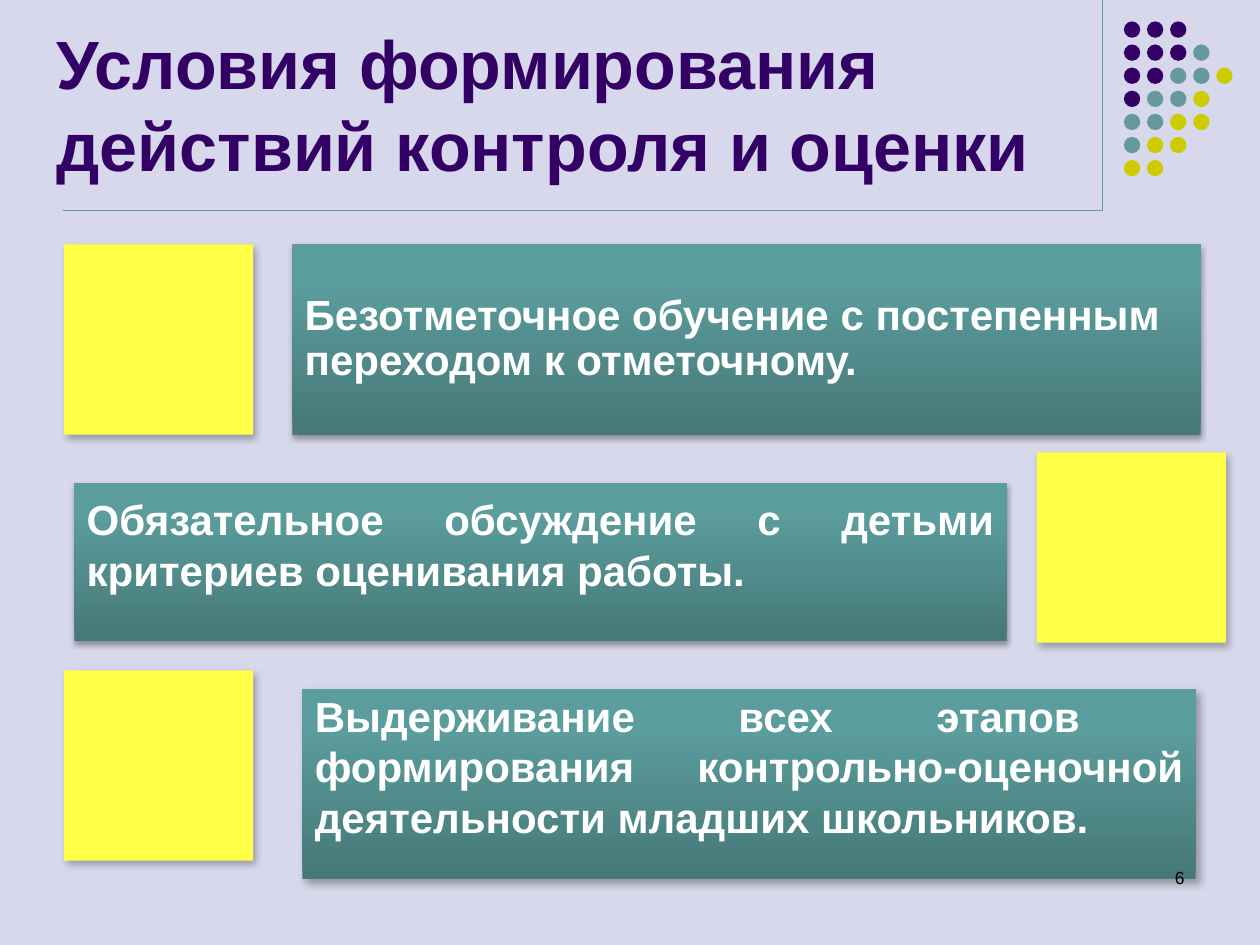
from copy import deepcopy
from dataclasses import dataclass

from lxml.etree import SubElement
from pptx import Presentation
from pptx.dml.color import RGBColor as RGB
from pptx.enum.shapes import MSO_CONNECTOR as Link, MSO_SHAPE as Kind
from pptx.enum.text import MSO_ANCHOR as Anchor, MSO_AUTO_SIZE as Fit, PP_ALIGN as Align
from pptx.oxml.ns import qn
from pptx.shapes.autoshape import Shape
from pptx.slide import Slide
from pptx.util import Inches, Pt


@dataclass(frozen=True)
class Theme:
    font: str = "Arial"
    back: str = "D8D8EC"
    dark: str = "330066"
    teal: str = "669999"
    lime: str = "CCCC00"
    tile: str = "FFFF47"
    text: str = "FFFFFF"
    black: str = "000000"
    grad: tuple = ((0, "467878"), (0.8, "5B9C9C"), (1, "5B9E9E"))
    head: int = 39
    body: int = 24
    note: int = 10


@dataclass(frozen=True)
class Box:
    left: float
    top: float
    width: float
    height: float

    def lengths(self) -> list:
        return [Inches(n) for n in (self.left, self.top, self.width, self.height)]


@dataclass(frozen=True)
class Shade:
    alpha: int
    blur: float
    dist: float
    angle: int


@dataclass(frozen=True)
class Panel:
    box: Box
    tile: Box
    text: str
    shade: Shade
    align: Align = Align.JUSTIFY
    anchor: Anchor = Anchor.TOP
    inset: float = 0.1
    space: float = 1.0


THEME = Theme()
SOFT = Shade(35, 3.1, 1.8, 90)
DEEP = Shade(30, 4.5, 2.6, 53)
SIDE = 1.5
TALL = 1.51
DOT = 0.13
STEP = 0.55 / 3
DOTS = ("DDD", "DDDT", "DDTTL", "DTTL", "TTLL", "TLL", "LL")
HUES = {"D": THEME.dark, "T": THEME.teal, "L": THEME.lime}

PANELS = (
    Panel(Box(2.32, 1.94, 7.21, TALL), Box(0.51, 1.94, SIDE, TALL),
          "Безотметочное обучение с постепенным переходом к отметочному.",
          SOFT, Align.LEFT, Anchor.MIDDLE, space=0.9),
    Panel(Box(0.59, 3.83, 7.4, 1.26), Box(8.23, 3.59, SIDE, TALL),
          "Обязательное обсуждение с детьми критериев оценивания работы.",
          SOFT, inset=0.09),
    Panel(Box(2.4, 5.47, 7.09, TALL), Box(0.51, 5.32, SIDE, TALL),
          "Выдерживание всех этапов  формирования контрольно-оценочной "
          "деятельности младших школьников.",
          DEEP, inset=0.01),
)


def hue(code: str) -> RGB:
    return RGB.from_string(code)


def shape(slide: Slide, kind: Kind, box: Box, fill: str) -> Shape:
    item = slide.shapes.add_shape(kind, *box.lengths())
    item.fill.solid()
    item.fill.fore_color.rgb = hue(fill)
    item.line.fill.background()
    item.shadow.inherit = False
    return item


def shade(item: Shape, look: Shade) -> None:
    flat = item._element.spPr.find(qn("a:effectLst"))
    outer = SubElement(flat, qn("a:outerShdw"), blurRad=str(Pt(look.blur)),
                       dist=str(Pt(look.dist)), dir=str(look.angle * 60000),
                       rotWithShape="0")
    tint = SubElement(outer, qn("a:srgbClr"), val=THEME.black)
    SubElement(tint, qn("a:alpha"), val=str(look.alpha * 1000))


def blend(item: Shape) -> None:
    item.fill.gradient()
    item.fill.gradient_angle = 90
    last = item._element.spPr.findall(".//" + qn("a:gs"))[-1]
    last.addnext(deepcopy(last))
    for stop, (place, code) in zip(item.fill.gradient_stops, THEME.grad):
        stop.position = place
        stop.color.rgb = hue(code)


def write(item: Shape, text: str, size: int, code: str, bold: bool, align: Align) -> None:
    frame = item.text_frame
    frame.word_wrap = True
    frame.auto_size = Fit.NONE
    frame.text = text
    para = frame.paragraphs[0]
    para.alignment = align
    font = para.font
    font.name, font.size, font.bold = THEME.font, Pt(size), bold
    font.color.rgb = hue(code)


def rule(slide: Slide, *ends: float) -> None:
    line = slide.shapes.add_connector(Link.STRAIGHT, *[Inches(n) for n in ends])
    line.line.color.rgb = hue(THEME.teal)
    line.line.width = Pt(0.75)
    SubElement(line._element.spPr, qn("a:effectLst"))


def dots(slide: Slide) -> None:
    for row, marks in enumerate(DOTS):
        for col, mark in enumerate(marks):
            spot = Box(8.92 + col * STEP, 0.17 + row * STEP, DOT, DOT)
            shape(slide, Kind.OVAL, spot, HUES[mark])


def title(slide: Slide) -> None:
    item = slide.shapes.title
    item.left, item.top, item.width, item.height = Box(0.35, 0.1, 8.25, 1.42).lengths()
    write(item, "Условия формирования действий контроля и оценки",
          THEME.head, THEME.dark, True, Align.LEFT)
    item.text_frame.vertical_anchor = Anchor.BOTTOM


def panel(slide: Slide, part: Panel) -> None:
    item = shape(slide, Kind.RECTANGLE, part.box, THEME.tile)
    blend(item)
    shade(item, part.shade)
    write(item, part.text, THEME.body, THEME.text, True, part.align)
    frame = item.text_frame
    frame.vertical_anchor = part.anchor
    frame.margin_left = frame.margin_right = Inches(0.1)
    frame.margin_top = frame.margin_bottom = Inches(part.inset)
    frame.paragraphs[0].line_spacing = part.space
    shade(shape(slide, Kind.RECTANGLE, part.tile, THEME.tile), DEEP)


def main() -> None:
    deck = Presentation()
    deck.slide_width, deck.slide_height = Inches(10), Inches(7.5)
    slide = deck.slides.add_slide(deck.slide_layouts[5])
    slide.background.fill.solid()
    slide.background.fill.fore_color.rgb = hue(THEME.back)
    rule(slide, 8.75, 0, 8.75, 1.67)
    dots(slide)
    rule(slide, 0.5, 1.67, 8.75, 1.67)
    title(slide)
    for part in PANELS:
        panel(slide, part)
    page = slide.shapes.add_textbox(*Box(7.17, 6.83, 2.33, 0.5).lengths())
    write(page, "6", THEME.note, THEME.black, False, Align.RIGHT)
    deck.save("out.pptx")


if __name__ == "__main__":
    main()
